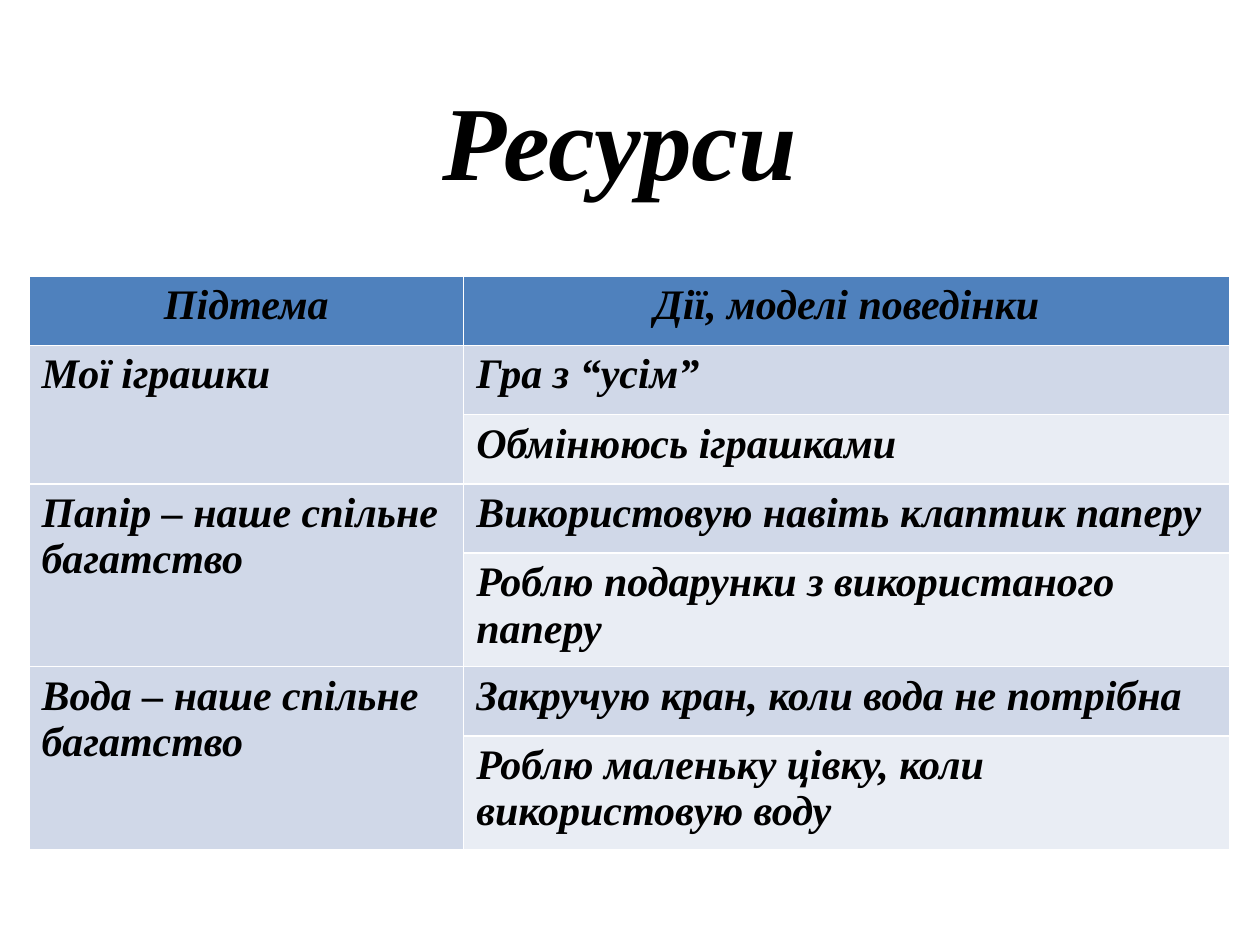
import pptx
import pptx.dml.color
import pptx.enum.text
import pptx.util
from pptx.util import Inches


def color(value):
    return pptx.dml.color.RGBColor.from_string(value)


def style(para, size, align):
    para.alignment = align
    para.font.name = "Times New Roman"
    para.font.size = pptx.util.Pt(size)
    para.font.bold = True
    para.font.italic = True
    para.font.color.rgb = color("000000")


CENTER = pptx.enum.text.PP_ALIGN.CENTER
LEFT = pptx.enum.text.PP_ALIGN.LEFT
HEADER, BAND, LIGHT = "4F81BD", "D0D8E8", "E9EDF4"

HEADINGS = ["Підтема", "Дії, моделі поведінки"]
TOPICS = [
    ("Мої іграшки", ["Гра з “усім”", "Обмінююсь іграшками"]),
    ("Папір – наше спільне багатство",
     ["Використовую навіть клаптик паперу",
      "Роблю подарунки з використаного паперу"]),
    ("Вода – наше спільне багатство",
     ["Закручую кран, коли вода не потрібна",
      "Роблю маленьку цівку, коли використовую воду"]),
]
ROW_HEIGHTS = [0.55, 0.55, 0.55, 0.55, 0.9, 0.55, 0.9]

deck = pptx.Presentation()
deck.slide_width, deck.slide_height = Inches(10), Inches(7.5)
page = deck.slides.add_slide(deck.slide_layouts[5])

title = page.shapes.title
title.left, title.top = Inches(2.5), Inches(0.55)
title.width, title.height = Inches(4.84), Inches(1.11)
frame = title.text_frame
frame.text = "Ресурси"
frame.auto_size = pptx.enum.text.MSO_AUTO_SIZE.NONE
frame.vertical_anchor = pptx.enum.text.MSO_ANCHOR.TOP
style(frame.paragraphs[0], 60, CENTER)

# The default table style supplies the white cell borders.
table = page.shapes.add_table(
    len(ROW_HEIGHTS), 2, Inches(0.23), Inches(2.19),
    Inches(9.53), Inches(sum(ROW_HEIGHTS))).table
table.columns[0].width = Inches(3.45)
table.columns[1].width = Inches(6.08)
for row, height in zip(table.rows, ROW_HEIGHTS):
    row.height = Inches(height)

# Each entry: row, column, text, fill, alignment
entries = [(0, column, text, HEADER, CENTER)
           for column, text in enumerate(HEADINGS)]
for index, (topic, actions) in enumerate(TOPICS):
    first = 1 + 2 * index
    table.cell(first, 0).merge(table.cell(first + 1, 0))
    entries.append((first, 0, topic, BAND, LEFT))
    for offset, (action, fill) in enumerate(zip(actions, [BAND, LIGHT])):
        entries.append((first + offset, 1, action, fill, LEFT))

for row, column, text, fill, align in entries:
    cell = table.cell(row, column)
    cell.text = text
    cell.fill.solid()
    cell.fill.fore_color.rgb = color(fill)
    style(cell.text_frame.paragraphs[0], 24, align)

deck.save("out.pptx")
